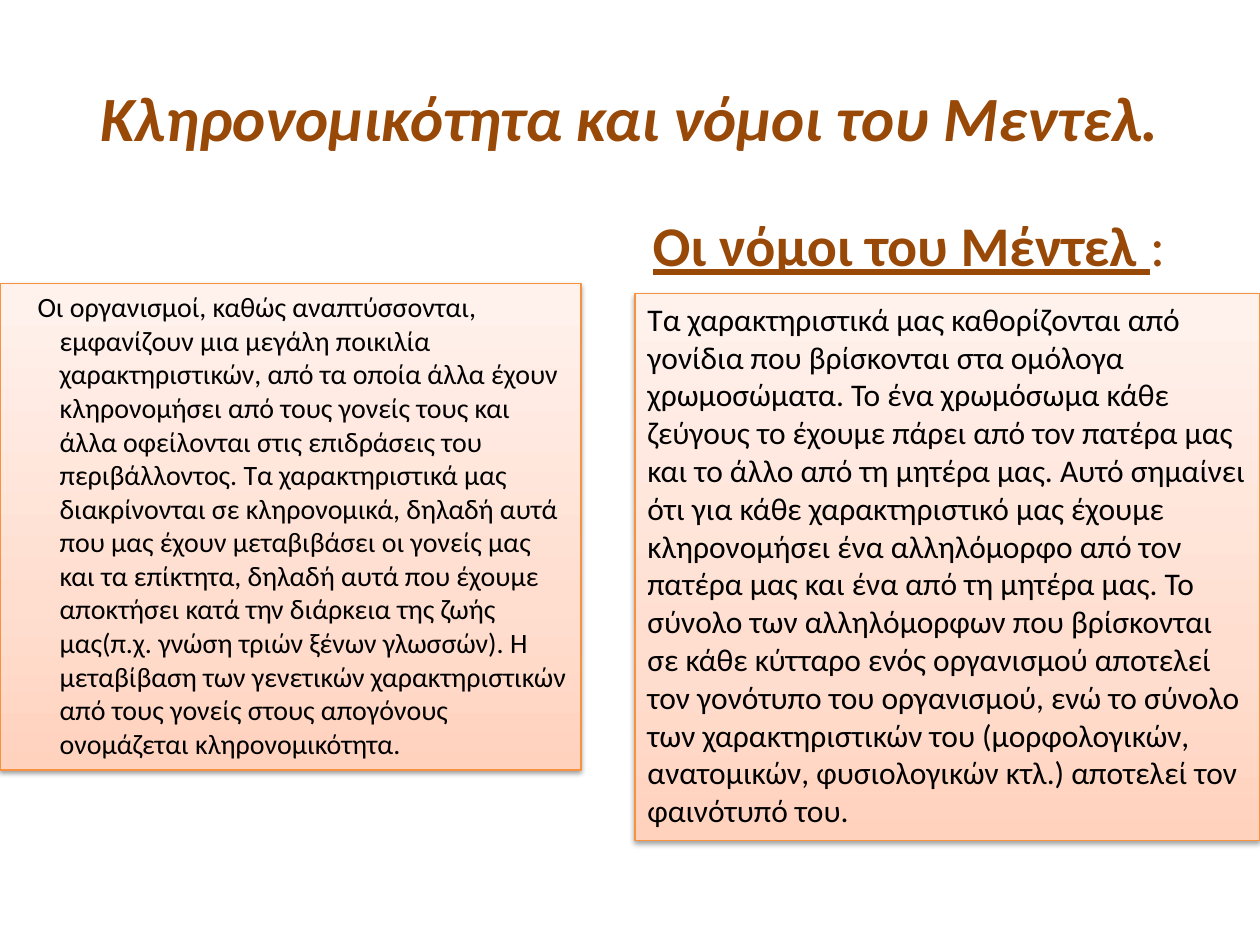
from copy import deepcopy

from lxml import etree
from pptx import Presentation
from pptx.dml.color import RGBColor
from pptx.enum.shapes import MSO_SHAPE
from pptx.enum.text import MSO_ANCHOR, PP_ALIGN
from pptx.oxml.ns import qn
from pptx.util import Pt

RECT = MSO_SHAPE.RECTANGLE
TOP, MIDDLE = MSO_ANCHOR.TOP, MSO_ANCHOR.MIDDLE
LEFT, CENTER = PP_ALIGN.LEFT, PP_ALIGN.CENTER


def rgb(code):
    return RGBColor.from_string(code)


class Deck:
    font = "Calibri"
    brown, black, edge = "984807", "000000", "F69240"
    peach = [(0, "FFD2BD"), (0.35, "FFDED0"), (1, "FFF2ED")]

    def __init__(self, wide, high):
        self.prs = Presentation()
        self.prs.slide_width, self.prs.slide_height = Pt(wide), Pt(high)
        self.slide = self.prs.slides.add_slide(self.prs.slide_layouts[6])

    def style(self, run, size, color, bold=False, italic=False, under=False):
        font = run.font
        font.name, font.size = self.font, Pt(size)
        font.bold, font.italic, font.underline = bold, italic, under
        font.color.rgb = rgb(color)

    def set_text(self, shape, text, size, color, align=LEFT, anchor=TOP,
                 **look):
        frame = shape.text_frame
        frame.word_wrap = True
        frame.vertical_anchor = anchor
        frame.text = text
        para = frame.paragraphs[0]
        para.alignment = align
        self.style(para.runs[0], size, color, **look)
        return para

    def label(self, area, text, size, **look):
        box = self.slide.shapes.add_textbox(*map(Pt, area))
        return self.set_text(box, text, size, self.brown, **look)

    def shade(self, shape):
        shape.shadow.inherit = False
        effects = shape._element.spPr.find(qn("a:effectLst"))
        outer = etree.SubElement(
            effects, qn("a:outerShdw"), blurRad=str(Pt(3.1)),
            dist=str(Pt(1.6)), dir="5400000", rotWithShape="0")
        color = etree.SubElement(outer, qn("a:srgbClr"), val=self.black)
        etree.SubElement(color, qn("a:alpha"), val="38000")

    def panel(self, area, text, size):
        box = self.slide.shapes.add_shape(RECT, *map(Pt, area))
        # Three-stop gradient, darkest at the bottom
        box.fill.gradient()
        box.fill.gradient_angle = 90
        stops = box._element.spPr.find(".//" + qn("a:gsLst"))
        stops.append(deepcopy(stops[0]))
        for stop, (place, color) in zip(box.fill.gradient_stops, self.peach):
            stop.position, stop.color.rgb = place, rgb(color)
        box.line.color.rgb = rgb(self.edge)
        box.line.width = Pt(0.75)
        self.shade(box)
        return self.set_text(box, text, size, self.black)


def main():
    deck = Deck(720, 540)

    # Title
    deck.label((36, 21.6, 648, 90), "Κληρονομικότητα και νόμοι του Μεντελ.",
               36, align=CENTER, anchor=MIDDLE, bold=True, italic=True)

    # Heredity, with a hanging indent
    para = deck.panel(
        (0, 162, 332, 278),
        "Οι οργανισμοί, καθώς αναπτύσσονται, εμφανίζουν μια μεγάλη ποικιλία "
        "χαρακτηριστικών, από τα οποία άλλα έχουν κληρονομήσει από τους "
        "γονείς τους και άλλα οφείλονται στις επιδράσεις του περιβάλλοντος. "
        "Τα χαρακτηριστικά μας διακρίνονται σε κληρονομικά, δηλαδή αυτά που "
        "μας έχουν μεταβιβάσει οι γονείς μας και τα επίκτητα, δηλαδή αυτά "
        "που έχουμε αποκτήσει κατά την διάρκεια της ζωής μας(π.χ. γνώση "
        "τριών ξένων γλωσσών). Η μεταβίβαση των γενετικών χαρακτηριστικών "
        "από τους γονείς στους απογόνους ονομάζεται κληρονομικότητα.", 16)
    props = para._p.get_or_add_pPr()
    props.set("marL", str(Pt(27)))
    props.set("indent", str(Pt(-12.6)))

    # Heading of the laws
    para = deck.label((365.8, 116.6, 329, 85), "Οι νόμοι του Μέντελ ", 32,
                      bold=True, under=True)
    colon = para.add_run()
    colon.text = ":"
    deck.style(colon, 32, deck.brown)

    # Laws
    deck.panel(
        (362.9, 167.8, 357.1, 312.5),
        "Τα χαρακτηριστικά μας καθορίζονται από γονίδια που βρίσκονται στα "
        "ομόλογα χρωμοσώματα. Το ένα χρωμόσωμα κάθε ζεύγους το έχουμε πάρει "
        "από τον πατέρα μας και το άλλο από τη μητέρα μας. Αυτό σημαίνει ότι "
        "για κάθε χαρακτηριστικό μας έχουμε κληρονομήσει ένα αλληλόμορφο από "
        "τον πατέρα μας και ένα από τη μητέρα μας. Το σύνολο των "
        "αλληλόμορφων που βρίσκονται σε κάθε κύτταρο ενός οργανισμού "
        "αποτελεί τον γονότυπο του οργανισμού, ενώ το σύνολο των "
        "χαρακτηριστικών του (μορφολογικών, ανατομικών, φυσιολογικών κτλ.) "
        "αποτελεί τον φαινότυπό του.", 18)

    deck.prs.save("out.pptx")


if __name__ == "__main__":
    main()
